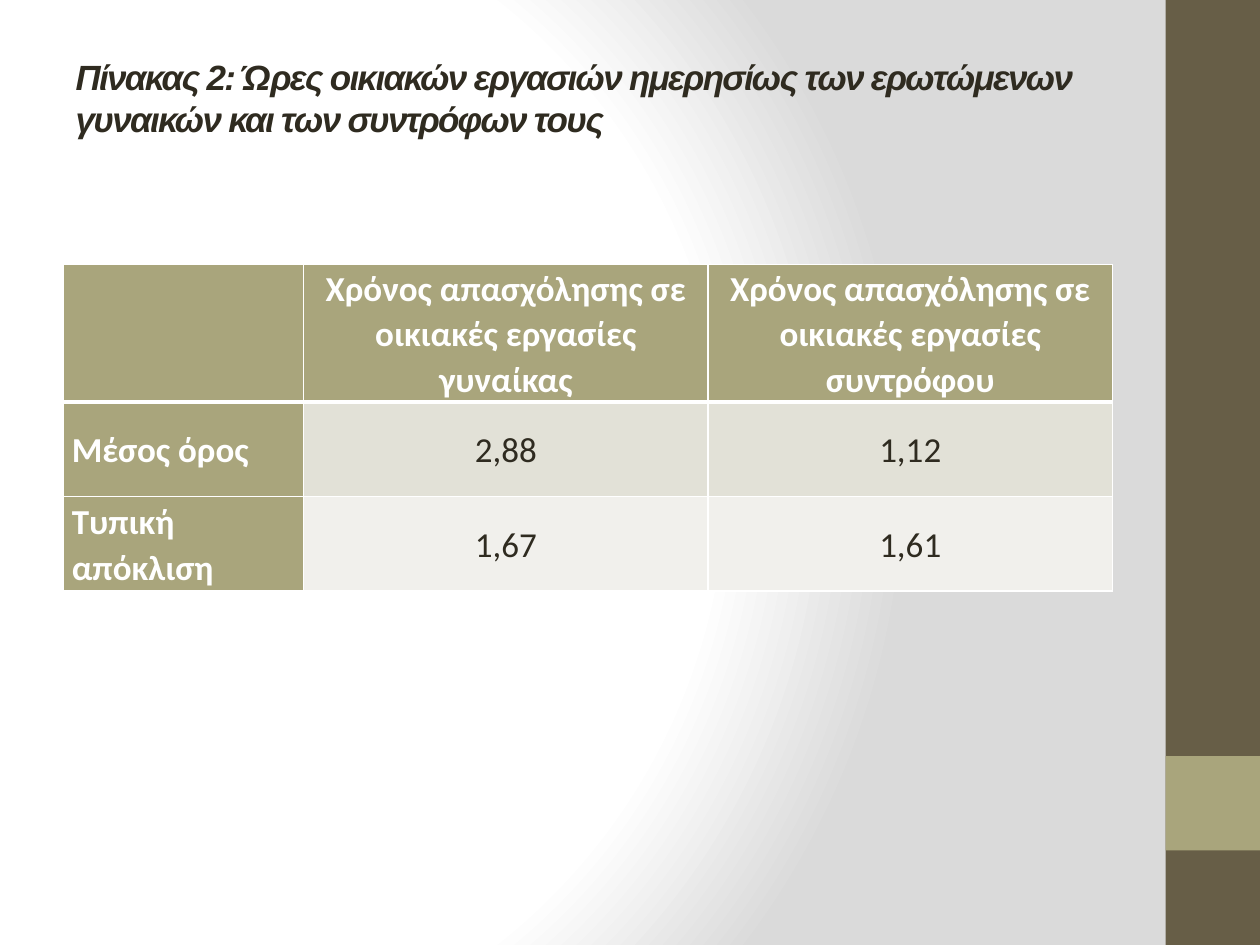
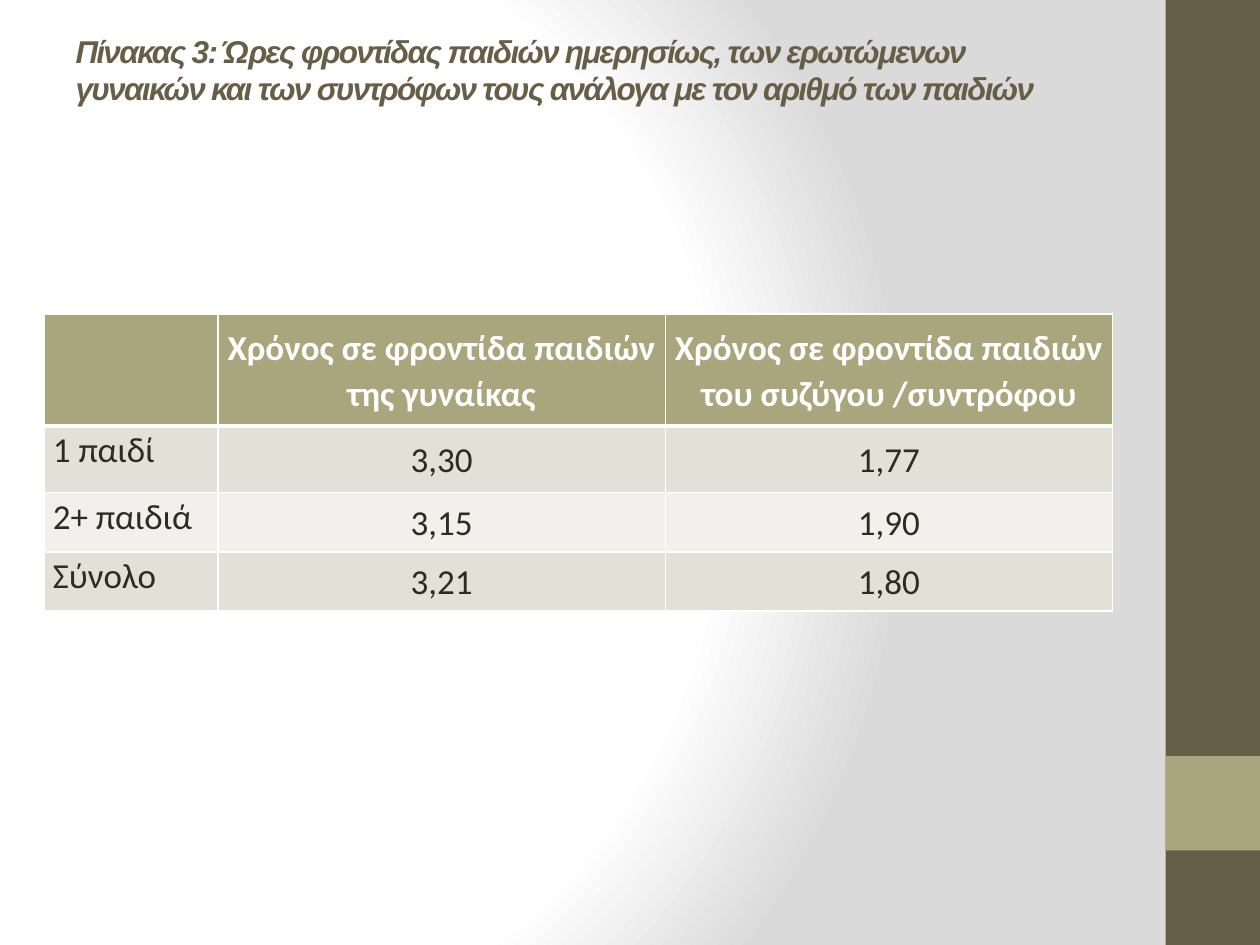
import pptx
import pptx.dml.color
import pptx.enum.shapes
import pptx.enum.text
import pptx.oxml
import pptx.oxml.ns
import pptx.util
from dataclasses import dataclass

Inches = pptx.util.Inches
Pt = pptx.util.Pt
RGB = pptx.dml.color.RGBColor.from_string
Align = pptx.enum.text.PP_ALIGN
Anchor = pptx.enum.text.MSO_ANCHOR


@dataclass
class Theme:
    ink: str = "2F2B20"
    brown: str = "675E47"
    olive: str = "A9A57C"
    white: str = "FFFFFF"
    grey: str = "DADADA"
    stripes: tuple = ("E2E1D7", "F1F0EC")
    title_font: str = "Arial"
    table_font: str = "Calibri"
    table_size: int = 20


theme = Theme()


def write(frame, text, font, size, color, bold=False, italic=False, align=Align.LEFT,
          line_spacing=None, space_after=0, tracking=0):
    paragraph = frame.paragraphs[0]
    paragraph.text = text
    paragraph.alignment = align
    paragraph.line_spacing = line_spacing
    paragraph.space_after = Pt(space_after)
    for run in paragraph.runs:
        run.font.name = font
        run.font.size = Pt(size)
        run.font.bold = bold
        run.font.italic = italic
        run.font.color.rgb = RGB(color)
        if tracking:
            run.font._element.set("spc", str(tracking * 100))


def add_borders(cell, top, bottom):
    properties = cell._tc.get_or_add_tcPr()
    for side, width in (("L", 1), ("R", 1), ("T", top), ("B", bottom)):
        properties.append(pptx.oxml.parse_xml(
            f'<a:ln{side} {pptx.oxml.ns.nsdecls("a")} w="{Pt(width)}"><a:solidFill>'
            f'<a:srgbClr val="{theme.white}"/></a:solidFill></a:ln{side}>'))


deck = pptx.Presentation()
deck.slide_width = Inches(10)
deck.slide_height = Inches(7.5)
master = deck.slide_master
title_only = deck.slide_layouts[5]

stops = "".join(f'<a:gs pos="{position * 1000}"><a:srgbClr val="{color}"/></a:gs>'
                for position, color in ((0, theme.white), (75, theme.white), (100, theme.grey)))
common = master.element.find(pptx.oxml.ns.qn("p:cSld"))
for plain_background in common.findall(pptx.oxml.ns.qn("p:bg")):
    common.remove(plain_background)
common.insert(0, pptx.oxml.parse_xml(
    f'<p:bg {pptx.oxml.ns.nsdecls("p", "a")}><p:bgPr><a:gradFill rotWithShape="1">'
    f'<a:gsLst>{stops}</a:gsLst><a:path path="circle">'
    '<a:fillToRect l="20000" t="50000" r="100000" b="50000"/></a:path></a:gradFill>'
    '<a:effectLst/></p:bgPr></p:bg>'))

tables = [
    dict(title="Πίνακας 2: Ώρες οικιακών εργασιών ημερησίως των ερωτώμενων "
               "γυναικών και των συντρόφων τους",
         title_size=20, title_color=theme.ink, title_bottom=0.35,
         left=0.5, top=2.1, widths=(1.91, 3.21, 3.21), heights=(1.05, 0.75, 0.75),
         label_heads=True, label_anchor=Anchor.MIDDLE,
         rows=[("", "Χρόνος απασχόλησης σε οικιακές εργασίες γυναίκας",
                "Χρόνος απασχόλησης σε οικιακές εργασίες συντρόφου"),
               ("Μέσος όρος", "2,88", "1,12"),
               ("Τυπική απόκλιση", "1,67", "1,61")]),
    dict(title="Πίνακας 3: Ώρες φροντίδας παιδιών ημερησίως, των ερωτώμενων "
               "γυναικών και των συντρόφων τους ανάλογα με τον αριθμό των παιδιών",
         title_size=18, title_color=theme.brown, title_bottom=0.8,
         left=0.35, top=2.49, widths=(1.38, 3.55, 3.55), heights=(0.89, 0.53, 0.47, 0.47),
         label_heads=False, label_anchor=Anchor.TOP,
         rows=[("", "Χρόνος σε φροντίδα παιδιών\vτης γυναίκας",
                "Χρόνος σε φροντίδα παιδιών\vτου συζύγου /συντρόφου"),
               ("1 παιδί", "3,30", "1,77"),
               ("2+ παιδιά", "3,15", "1,90"),
               ("Σύνολο", "3,21", "1,80")]),
]

for content in tables:
    slide = deck.slides.add_slide(title_only)
    title = slide.shapes.title
    title.left, title.top = Inches(0.5), Inches(0.3)
    title.width, title.height = Inches(8.33), Inches(1.25)
    heading = title.text_frame
    heading.word_wrap = True
    heading.auto_size = pptx.enum.text.MSO_AUTO_SIZE.NONE
    heading.vertical_anchor = Anchor.MIDDLE
    heading.margin_bottom = Inches(content["title_bottom"])
    write(heading, content["title"], theme.title_font, content["title_size"],
          content["title_color"], bold=True, italic=True, tracking=-1)

    rows, widths, heights = content["rows"], content["widths"], content["heights"]
    hours = slide.shapes.add_table(
        len(rows), len(widths), Inches(content["left"]), Inches(content["top"]),
        Inches(sum(widths)), Inches(sum(heights))).table
    for column, width in zip(hours.columns, widths):
        column.width = Inches(width)
    for row, height in zip(hours.rows, heights):
        row.height = Inches(height)

    for r, values in enumerate(rows):
        for c, value in enumerate(values):
            cell = hours.cell(r, c)
            is_label = r > 0 and c == 0
            is_head = r == 0 or (is_label and content["label_heads"])
            add_borders(cell, top=3 if r == 1 else 1, bottom=3 if r == 0 else 1)
            cell.fill.solid()
            cell.fill.fore_color.rgb = RGB(theme.olive if is_head else theme.stripes[(r - 1) % 2])
            cell.margin_left = cell.margin_right = Inches(0.07)
            cell.margin_top = cell.margin_bottom = 0
            cell.vertical_anchor = content["label_anchor"] if is_label else Anchor.MIDDLE
            if value:
                write(cell.text_frame, value, theme.table_font, theme.table_size,
                      theme.white if is_head else theme.ink, bold=is_head,
                      align=Align.LEFT if is_label else Align.CENTER,
                      line_spacing=1.07, space_after=8)

for order, (top, height, color) in enumerate(((0, 7.5, theme.brown), (6, 0.75, theme.olive))):
    band = slide.shapes.add_shape(pptx.enum.shapes.MSO_SHAPE.RECTANGLE,
                                  Inches(9.25), Inches(top), Inches(0.75), Inches(height))
    band.shadow.inherit = False
    band.fill.solid()
    band.fill.fore_color.rgb = RGB(color)
    band.line.fill.background()
    band.element.nvSpPr.cNvPr.set("id", str(100 + order))
    master.shapes.element.insert(2 + order, band.element)

deck.save("out.pptx")
